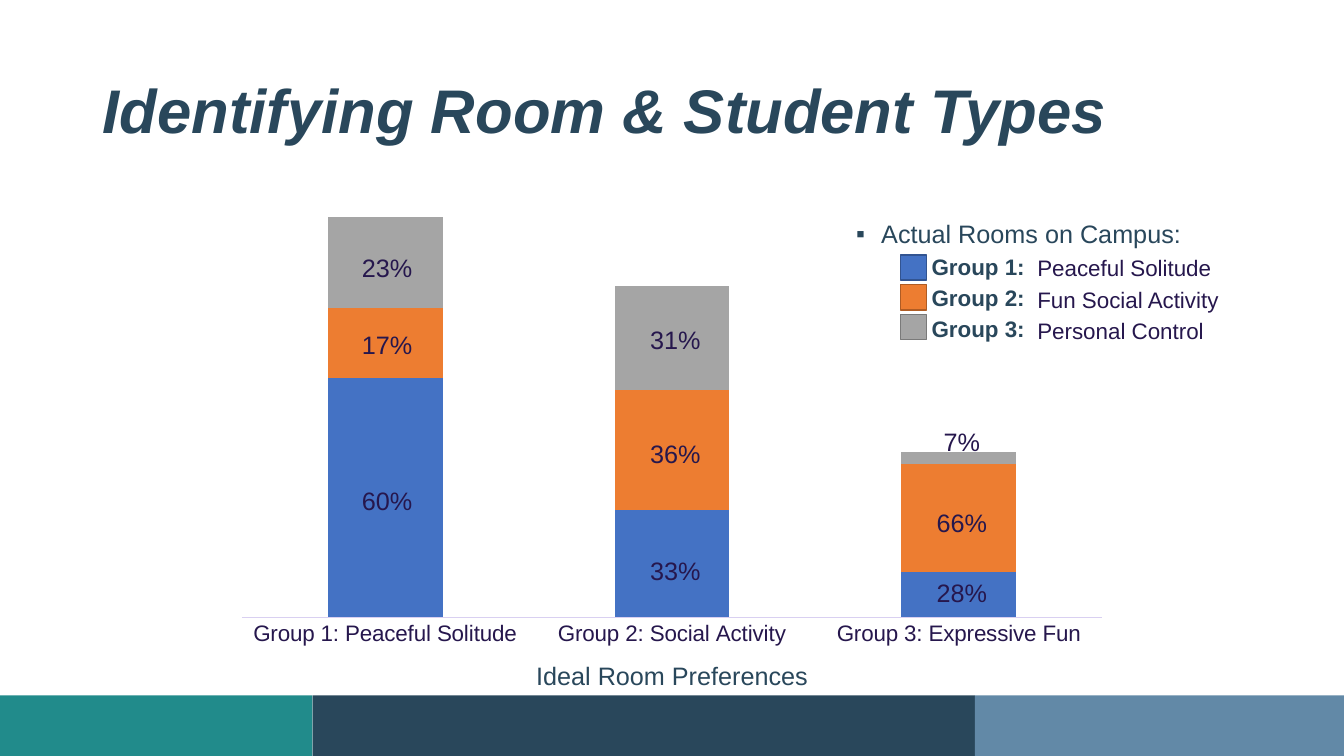
import pptx
import pptx.chart.data
import pptx.dml.color
import pptx.enum.chart
import pptx.enum.shapes
import pptx.enum.text
import pptx.oxml
import pptx.oxml.ns
import pptx.util
from dataclasses import dataclass
from pptx.util import Inches


@dataclass(frozen=True)
class Theme:
    """Colours, font and type sizes of the slide."""
    font: str = "Arial"
    dark: str = "29475B"
    ink: str = "26174D"
    teal: str = "218B8B"
    steel: str = "6289A7"
    axis: str = "D9D0F1"
    series: tuple = ("4472C4", "ED7D31", "A5A5A5")
    outlines: tuple = ("325491", "AF5C24", "7A7A7A")
    title: int = 44
    body: int = 18
    small: int = 16


THEME = Theme()
GROUPS = ("Group 1: Peaceful Solitude", "Group 2: Social Activity", "Group 3: Expressive Fun")
VALUES = ((100, 45, 19), (29, 50, 45), (38, 43, 5))
ROOMS = ("Peaceful Solitude", "Fun Social Activity", "Personal Control")
SHARES = (
    (3.49, (("60%", 4.77), ("17%", 3.22), ("23%", 2.45))),
    (6.35, (("33%", 5.46), ("36%", 4.3), ("31%", 3.17))),
    (9.19, (("28%", 5.68), ("66%", 4.98))),
    (9.26, (("7%", 4.18),)),
)


def rgb(value):
    """Return a colour object for a hex value."""
    return pptx.dml.color.RGBColor.from_string(value)


def style(font, size, color, bold=False, italic=False):
    """Format a font in the slide's typeface."""
    font.name, font.size = THEME.font, pptx.util.Pt(size)
    font.bold, font.italic = bold, italic
    font.color.rgb = rgb(color)


def place(shape, left, top, width, height):
    """Move and size a shape, in inches."""
    shape.left, shape.top = Inches(left), Inches(top)
    shape.width, shape.height = Inches(width), Inches(height)


def add_rect(s, left, top, width, height, fill, line=None):
    """Add a plain rectangle with an optional outline."""
    sp = s.shapes.add_shape(pptx.enum.shapes.MSO_SHAPE.RECTANGLE,
                            Inches(left), Inches(top), Inches(width), Inches(height))
    sp.shadow.inherit = False
    sp.fill.solid()
    sp.fill.fore_color.rgb = rgb(fill)
    if line:
        sp.line.color.rgb = rgb(line)
        sp.line.width = pptx.util.Pt(1)
    else:
        sp.line.fill.background()


def add_label(s, text, left, top, width, height, size):
    """Add a one-line text box."""
    tf = s.shapes.add_textbox(Inches(left), Inches(top), Inches(width), Inches(height)).text_frame
    tf.word_wrap = False
    tf.text = text
    style(tf.paragraphs[0].runs[0].font, size, THEME.ink)


def fill_title(sp, text):
    """Place and format the title."""
    place(sp, 0.92, 0.4, 11.5, 1.45)
    tf = sp.text_frame
    tf.text = text
    tf.auto_size = pptx.enum.text.MSO_AUTO_SIZE.NONE
    tf.vertical_anchor = pptx.enum.text.MSO_ANCHOR.MIDDLE
    p = tf.paragraphs[0]
    p.alignment, p.line_spacing = pptx.enum.text.PP_ALIGN.LEFT, 0.9
    style(p.runs[0].font, THEME.title, THEME.dark, bold=True, italic=True)


def fill_body(sp, lines):
    """Write lines of (text, level, indent, bullet, size, bold) into a body placeholder."""
    tf = sp.text_frame
    tf.text = "\n".join(line[0] for line in lines)
    tf.auto_size = pptx.enum.text.MSO_AUTO_SIZE.NONE
    for i, (p, line) in enumerate(zip(tf.paragraphs, lines)):
        _, level, indent, bullet, size, bold = line
        p.level, p.line_spacing = level, 0.9
        p.space_before = pptx.util.Pt(5 if i else 0)
        pPr = p._p.get_or_add_pPr()
        pPr.set("marL", str(Inches(indent)))
        pPr.set("indent", str(Inches(-0.25 if bullet else 0)))
        mark = pptx.oxml.ns.qn("a:buChar" if bullet else "a:buNone")
        bu = pPr.makeelement(mark, {"char": bullet} if bullet else {})
        pPr.append(bu)
        style(p.runs[0].font, size, THEME.dark, bold=bold)


def set_plot_area(chart, x, y, w, h):
    """Fix the inner plot area as fractions of the chart."""
    area = chart._chartSpace.chart.plotArea
    for old in area.findall(pptx.oxml.ns.qn("c:layout")):
        area.remove(old)
    sizes = "".join(f'<c:{k} val="{v}"/>' for k, v in zip("xywh", (x, y, w, h)))
    area.insert(0, pptx.oxml.parse_xml(
        f'<c:layout {pptx.oxml.ns.nsdecls("c")}><c:manualLayout>'
        '<c:layoutTarget val="inner"/><c:xMode val="edge"/><c:yMode val="edge"/>'
        f'{sizes}</c:manualLayout></c:layout>'))


def add_stacked_chart(s):
    """Add the stacked columns of room preferences."""
    data = pptx.chart.data.CategoryChartData()
    data.categories = GROUPS
    for i, values in enumerate(VALUES, 1):
        data.add_series(f"Series {i}", values)
    chart = s.shapes.add_chart(pptx.enum.chart.XL_CHART_TYPE.COLUMN_STACKED, Inches(2.22),
                               Inches(1.49), Inches(8.89), Inches(5.04), data).chart
    chart.has_legend = chart.has_title = False
    style(chart.font, 10, THEME.ink)
    plot = chart.plots[0]
    plot.gap_width, plot.overlap, plot.vary_by_categories = 150, 100, False
    for series, color in zip(plot.series, THEME.series):
        series.format.fill.solid()
        series.format.fill.fore_color.rgb = rgb(color)
    axis = chart.category_axis
    axis.major_tick_mark = axis.minor_tick_mark = pptx.enum.chart.XL_TICK_MARK.NONE
    axis.format.line.color.rgb = rgb(THEME.axis)
    axis.format.line.width = pptx.util.Pt(0.75)
    style(axis.tick_labels.font, THEME.small, THEME.ink)
    scale = chart.value_axis
    scale.minimum_scale, scale.maximum_scale = 0, 180
    scale.has_major_gridlines = scale.visible = False
    set_plot_area(chart, 0.02, 0.07, 0.96, 0.85)


def main():
    """Build and save the slide."""
    prs = pptx.Presentation()
    prs.slide_width, prs.slide_height = Inches(13.33), Inches(7.5)
    s = prs.slides.add_slide(prs.slide_layouts[3])
    title, caption, rooms = s.placeholders
    for left, right, color in ((0, 3.1, THEME.teal), (3.1, 9.67, THEME.dark),
                               (9.67, 13.33, THEME.steel)):
        add_rect(s, left, 6.9, right - left, 0.6, color)
    add_stacked_chart(s)

    fill_title(title, "Identifying Room & Student Types")
    place(caption, 2.22, 6.53, 8.89, 0.4)
    fill_body(caption, [("Ideal Room Preferences", 1, 0, None, THEME.body, False)])
    caption.text_frame.paragraphs[0].alignment = pptx.enum.text.PP_ALIGN.CENTER
    place(rooms, 7.39, 2.15, 5.94, 1.5)
    fill_body(rooms, [("Actual Rooms on Campus:", 1, 1.25, "▪", THEME.body, False)]
              + [(f"Group {i}:", 2, 1.75, None, THEME.small, True) for i in (1, 2, 3)])

    for i, room in enumerate(ROOMS):
        add_label(s, room, 10.19, 2.47 + 0.315 * i, 2, 0.37, THEME.small)
        add_rect(s, 8.93, 2.53 + 0.295 * i, 0.26, 0.25, THEME.series[i], THEME.outlines[i])
    for left, labels in SHARES:
        for text, top in labels:
            add_label(s, text, left, top, 0.71 if len(text) > 2 else 0.57, 0.4, THEME.body)
    prs.save("out.pptx")


if __name__ == "__main__":
    main()
